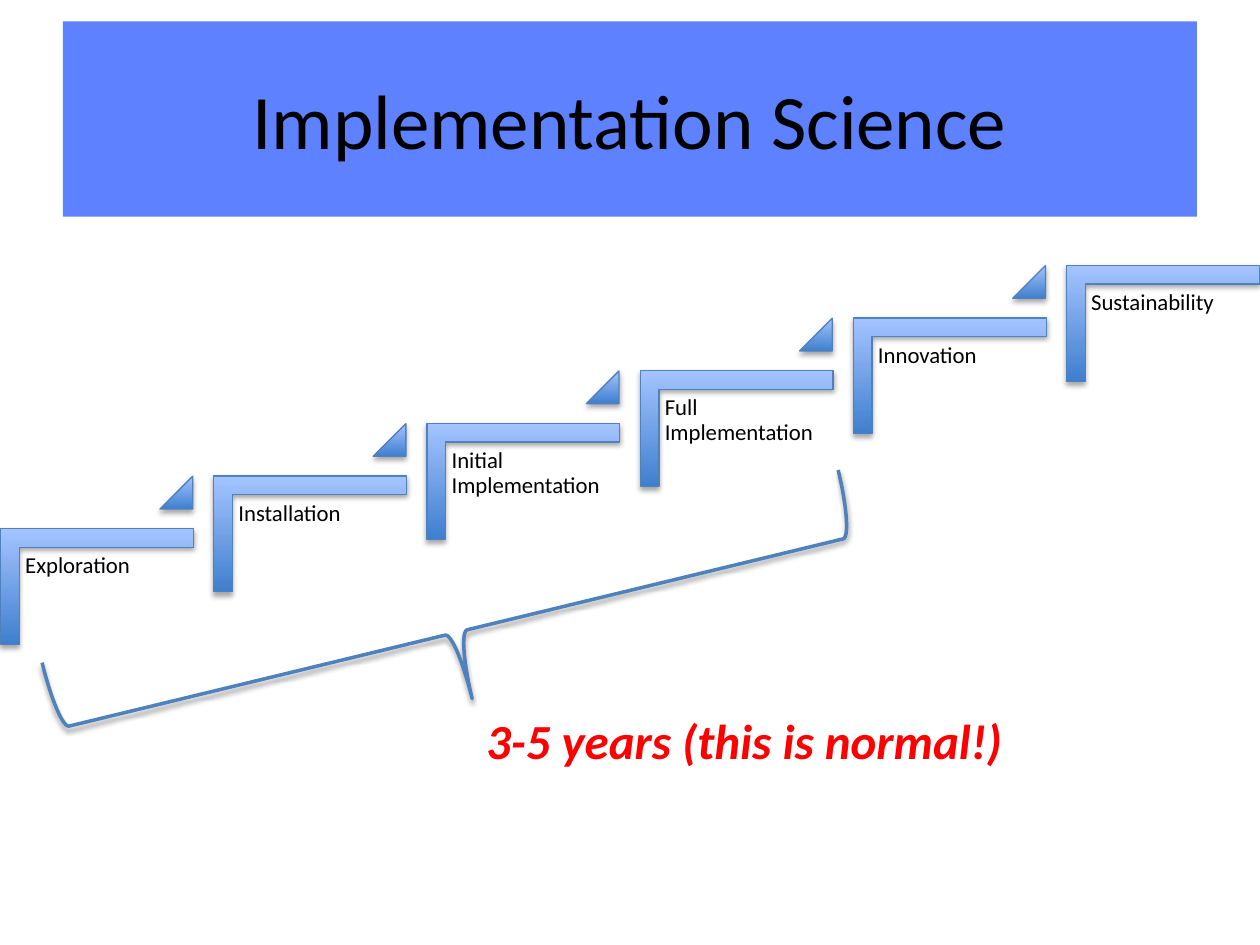
from dataclasses import dataclass

from lxml.etree import SubElement
from pptx import Presentation
from pptx.dml.color import RGBColor
from pptx.enum.shapes import MSO_SHAPE as Preset
from pptx.enum.text import MSO_ANCHOR as Anchor, PP_ALIGN as Align
from pptx.oxml.ns import qn
from pptx.shapes.autoshape import Shape
from pptx.util import Inches, Pt

FONT = "Calibri"
COLORS = {
    "banner": "5D81FF",
    "text": "000000",
    "accent": "FF0000",
    "line": "4F81BD",
    "gradient_dark": "3F7FCE",
    "gradient_light": "A4C4FF",
    "shadow": "000000",
}


@dataclass(frozen=True)
class Box:
    left: float
    top: float
    width: float
    height: float

    def moved(self, right: float, up: float) -> "Box":
        return Box(self.left + right, self.top - up, self.width, self.height)

    def lengths(self) -> list[Inches]:
        return [Inches(v) for v in (self.left, self.top, self.width, self.height)]


@dataclass(frozen=True)
class TextStyle:
    size: float
    color: str = "text"
    emphasis: bool = False


# Staircase: first step's parts and the offset to each next step
STAGES = ["Exploration", "Installation", "Initial Implementation",
          "Full Implementation", "Innovation", "Sustainability"]
CORNER = Box(0.31, 3.89, 0.92, 1.53)
LABEL = Box(0.15, 4.35, 1.38, 1.21)
TRIANGLE = Box(1.27, 3.78, 0.26, 0.26)
STEP_RIGHT = (8.77 - 0.31) / 5
STEP_UP = (3.89 - 1.8) / 5


def rgb(name: str) -> RGBColor:
    return RGBColor.from_string(COLORS[name])


def write(shape: Shape, text: str, style: TextStyle, align: Align):
    frame = shape.text_frame
    frame.word_wrap = True
    paragraph = frame.paragraphs[0]
    paragraph.alignment = align
    run = paragraph.add_run()
    run.text = text
    run.font.name = FONT
    run.font.size = Pt(style.size)
    run.font.color.rgb = rgb(style.color)
    if style.emphasis:
        run.font.bold = run.font.italic = True
    return paragraph


def add_shadow(shape: Shape, distance: float, opacity: int) -> None:
    shape.shadow.inherit = False
    effects = shape._element.spPr.find(qn("a:effectLst"))
    shadow = SubElement(effects, qn("a:outerShdw"), blurRad=str(Pt(3.1)),
                        dist=str(Pt(distance)), dir="5400000", rotWithShape="0")
    color = SubElement(shadow, qn("a:srgbClr"), val=COLORS["shadow"])
    SubElement(color, qn("a:alpha"), val=str(opacity * 1000))


def outline(shape: Shape, width: float) -> None:
    shape.line.color.rgb = rgb("line")
    shape.line.width = Pt(width)


def add_step_shape(shapes, preset: Preset, box: Box, adjustments: list[float],
                   rotation: float = 0) -> None:
    shape = shapes.add_shape(preset, *box.lengths())
    for index, value in enumerate(adjustments):
        shape.adjustments[index] = value
    shape.rotation = rotation
    # Dark at the bottom, light at the top, whatever the rotation
    shape.fill.gradient()
    shape.fill.gradient_angle = 90
    for stop, name in zip(shape.fill.gradient_stops, ("gradient_dark", "gradient_light")):
        stop.color.rgb = rgb(name)
    shape._element.spPr.find(qn("a:gradFill")).set("rotWithShape", "0")
    outline(shape, 0.75)
    add_shadow(shape, 1.8, 35)


def add_label(shapes, box: Box, text: str) -> None:
    label = shapes.add_textbox(*box.lengths())
    frame = label.text_frame
    frame.margin_left = frame.margin_right = Inches(0.05)
    frame.margin_top = frame.margin_bottom = Inches(0.05)
    paragraph = write(label, text, TextStyle(13), Align.LEFT)
    paragraph.line_spacing = 0.9


def add_title(slide) -> None:
    banner = slide.shapes.add_shape(Preset.RECTANGLE, *Box(0.5, 0.17, 9, 1.55).lengths())
    banner.shadow.inherit = False
    banner.fill.solid()
    banner.fill.fore_color.rgb = rgb("banner")
    banner.line.fill.background()
    banner.text_frame.vertical_anchor = Anchor.MIDDLE
    write(banner, "Implementation Science", TextStyle(44), Align.CENTER)


def add_staircase(slide) -> None:
    shapes = slide.shapes.add_group_shape().shapes
    for index, stage in enumerate(STAGES):
        offset = (index * STEP_RIGHT, index * STEP_UP)
        add_step_shape(shapes, Preset.CORNER, CORNER.moved(*offset), [0.161, 0.161], 90)
        add_label(shapes, LABEL.moved(*offset), stage)
        if index < len(STAGES) - 1:
            add_step_shape(shapes, Preset.ISOSCELES_TRIANGLE, TRIANGLE.moved(*offset), [1])


def add_duration(slide) -> None:
    # Brace under the first four stages
    brace = slide.shapes.add_shape(Preset.RIGHT_BRACE, *Box(3.08, 1.77, 1.08, 6.5).lengths())
    brace.adjustments[0] = 0.083
    brace.adjustments[1] = 0.5
    brace.rotation = 76.4
    brace.fill.background()
    outline(brace, 2)
    add_shadow(brace, 1.6, 38)
    # Time span
    caption = slide.shapes.add_textbox(*Box(3.2, 5.59, 5.41, 0.57).lengths())
    write(caption, "3-5 years (this is normal!)", TextStyle(28, "accent", True), Align.CENTER)


def main() -> None:
    presentation = Presentation()
    presentation.slide_width = Inches(10)
    presentation.slide_height = Inches(7.5)
    slide = presentation.slides.add_slide(presentation.slide_layouts[6])
    add_title(slide)
    add_staircase(slide)
    add_duration(slide)
    presentation.save("out.pptx")


if __name__ == "__main__":
    main()
